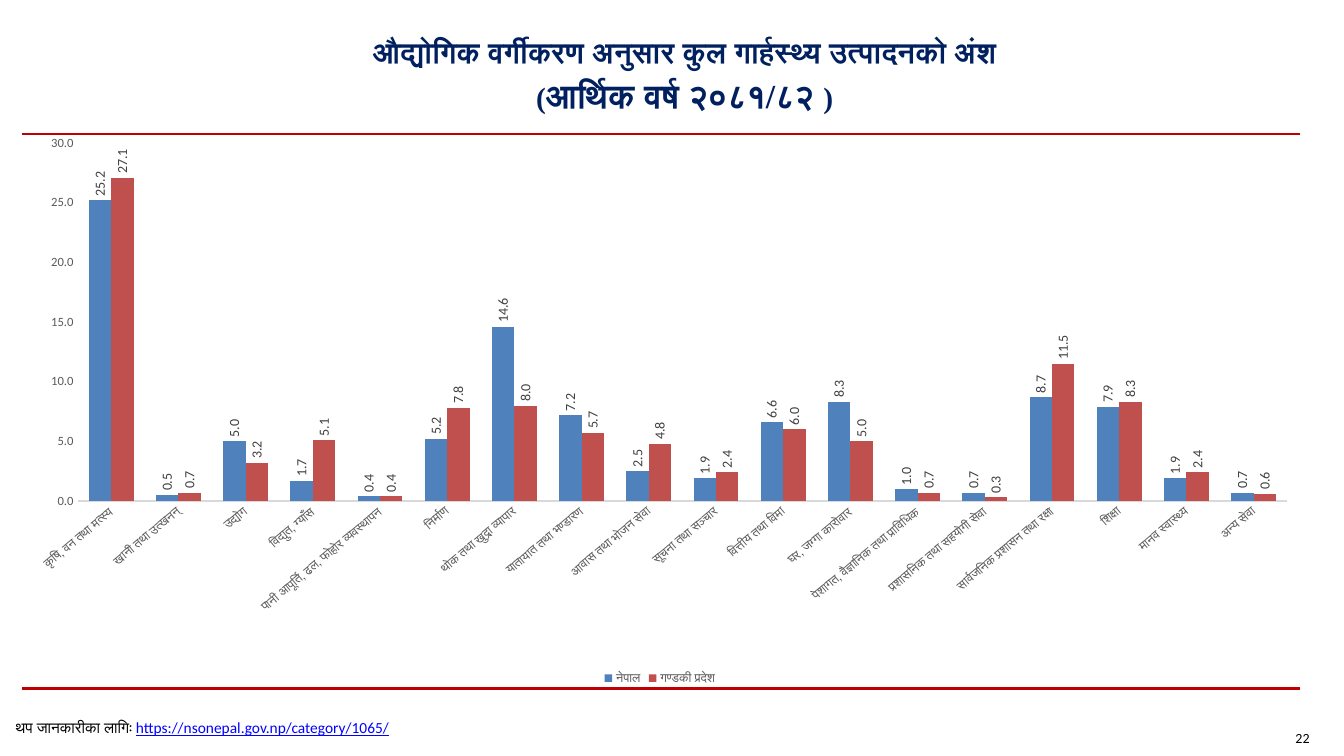
from lxml import etree
from pptx import Presentation
from pptx.chart.data import CategoryChartData
from pptx.dml.color import RGBColor
from pptx.enum.chart import XL_CHART_TYPE, XL_LABEL_POSITION, XL_LEGEND_POSITION, XL_TICK_MARK
from pptx.enum.shapes import MSO_CONNECTOR
from pptx.enum.text import MSO_ANCHOR, MSO_AUTO_SIZE, PP_ALIGN
from pptx.oxml import parse_xml
from pptx.oxml.ns import nsdecls, qn
from pptx.util import Pt

PX = 9144
COLUMN = XL_CHART_TYPE.COLUMN_CLUSTERED
OUTER = XL_LABEL_POSITION.OUTSIDE_END
BOTTOM = XL_LEGEND_POSITION.BOTTOM
NO_TICK = XL_TICK_MARK.NONE
STRAIGHT = MSO_CONNECTOR.STRAIGHT
MIDDLE = MSO_ANCHOR.MIDDLE
NO_FIT = MSO_AUTO_SIZE.NONE
CENTER = PP_ALIGN.CENTER

NAVY = RGBColor(0x00, 0x20, 0x60)
CRIMSON = RGBColor(0xC0, 0x00, 0x00)
BLACK = RGBColor(0x00, 0x00, 0x00)
LINK = RGBColor(0x00, 0x00, 0xFF)
GRAY = RGBColor(0x59, 0x59, 0x59)
DARK = RGBColor(0x40, 0x40, 0x40)
PALE = RGBColor(0xD9, 0xD9, 0xD9)
BLUE = RGBColor(0x4F, 0x81, 0xBD)
RED = RGBColor(0xC0, 0x50, 0x4D)

SHARES = [
    ("कृषि, वन तथा मत्स्य", 25.2, 27.1),
    ("खानी तथा उत्खनन्", 0.5, 0.7),
    ("उद्योग", 5.0, 3.2),
    ("विद्युत, ग्याँस", 1.7, 5.1),
    ("पानी आपूर्ति, ढल, फोहोर व्यवस्थापन", 0.4, 0.4),
    ("निर्माण", 5.2, 7.8),
    ("थोक तथा खुद्रा व्यापार", 14.6, 8.0),
    ("यातायात तथा भण्डारण", 7.2, 5.7),
    ("आवास तथा भोजन सेवा", 2.5, 4.8),
    ("सूचना तथा सञ्चार", 1.9, 2.4),
    ("वित्तीय तथा विमा", 6.6, 6.0),
    ("घर, जग्गा कारोवार", 8.3, 5.0),
    ("पेशागत, वैज्ञानिक तथा प्राविधिक", 1.0, 0.7),
    ("प्रशासनिक तथा सहयोगी सेवा", 0.7, 0.3),
    ("सार्वजनिक प्रशासन तथा रक्षा", 8.7, 11.5),
    ("शिक्षा", 7.9, 8.3),
    ("मानव स्वास्थ्य", 1.9, 2.4),
    ("अन्य सेवा", 0.7, 0.6),
]
REGIONS = [("नेपाल", BLUE), ("गण्डकी प्रदेश", RED)]


def scale(*lengths):
    """Turn px lengths into EMU."""
    return [length * PX for length in lengths]


def style(font, size, color, name="Calibri"):
    """Set the size, colour and face of a font."""
    font.size, font.name = Pt(size), name
    font.color.rgb = color


def add_run(para, text, size, color, name="Calibri"):
    """Append a styled run and return its font."""
    run = para.add_run()
    run.text = text
    style(run.font, size, color, name)
    return run.font


def add_title(slide, box):
    """Fill the title placeholder with two centred lines."""
    title = slide.shapes.title
    title.left, title.top, title.width, title.height = scale(*box)
    frame = title.text_frame
    frame.auto_size, frame.vertical_anchor = NO_FIT, MIDDLE
    para = frame.paragraphs[0]
    para.alignment, para.line_spacing = CENTER, 1.14
    head = "औद्योगिक वर्गीकरण अनुसार कुल गार्हस्थ्य उत्पादनको अंश"
    for text, size in [(head, 21), ("\v", 21), ("(", 21), ("आर्थिक वर्ष २०८१/८२ ", 24), (")", 21)]:
        if text == "\v":
            para.add_line_break()
        else:
            add_run(para, text, size, NAVY, "Times New Roman").bold = True


def add_rule(slide, left, top, width):
    """Draw a crimson rule across the slide."""
    rule = slide.shapes.add_connector(STRAIGHT, *scale(left, top, left + width, top))
    rule.line.color.rgb = CRIMSON
    rule.line.width = Pt(1.5)
    etree.SubElement(rule.element.spPr, qn("a:effectLst"))


def add_note(slide, box, parts):
    """Place one line of text from (text, size, colour) parts."""
    frame = slide.shapes.add_textbox(*scale(*box)).text_frame
    frame.word_wrap = True
    for text, size, color in parts:
        add_run(frame.paragraphs[0], text, size, color).underline = color == LINK


def turn(root, query, angle):
    """Rotate the chart text found by a query, in degrees."""
    for body in root.xpath(query):
        body.set("rot", str(angle * 60000))
        body.set("vert", "horz")


def set_plot(root, **place):
    """Fix the inner plot area as shares of the chart."""
    area = root.xpath(".//c:plotArea")[0]
    for old in area.findall(qn("c:layout")):
        area.remove(old)
    tags = '<c:layoutTarget val="inner"/><c:xMode val="edge"/><c:yMode val="edge"/>'
    tags += "".join(f'<c:{key} val="{value}"/>' for key, value in place.items())
    area.insert(0, parse_xml(
        f'<c:layout {nsdecls("c")}><c:manualLayout>{tags}</c:manualLayout></c:layout>'))


def add_bars(slide, box):
    """Place the clustered column chart of shares by industry."""
    names, *columns = zip(*SHARES)
    data = CategoryChartData(number_format="0.0")
    data.categories = names
    for (region, _), values in zip(REGIONS, columns):
        data.add_series(region, values)
    chart = slide.shapes.add_chart(COLUMN, *scale(*box), data).chart
    style(chart.font, 10, BLACK)
    chart.has_title = False
    chart.has_legend = True
    chart.legend.position = BOTTOM
    chart.legend.include_in_layout = False
    style(chart.legend.font, 9, GRAY)

    plot = chart.plots[0]
    plot.gap_width, plot.overlap = 100, 0
    plot.vary_by_categories = False
    for series, (_, color) in zip(plot.series, REGIONS):
        series.format.fill.solid()
        series.format.fill.fore_color.rgb = color
        labels = series.data_labels
        labels.show_value, labels.position = True, OUTER
        labels.number_format, labels.number_format_is_linked = "0.0", False
        style(labels.font, 10, DARK)

    for axis in (chart.category_axis, chart.value_axis):
        axis.major_tick_mark = axis.minor_tick_mark = NO_TICK
        axis.has_major_gridlines = False
        style(axis.tick_labels.font, 9, GRAY)
    line = chart.category_axis.format.line
    line.color.rgb, line.width = PALE, Pt(0.75)
    axis = chart.value_axis
    axis.format.line.fill.background()
    axis.minimum_scale, axis.maximum_scale, axis.major_unit = 0, 30, 5
    axis.tick_labels.number_format = "0.0"
    axis.tick_labels.number_format_is_linked = False

    root = chart._chartSpace
    turn(root, ".//c:dLbls/c:txPr/a:bodyPr", -90)
    turn(root, ".//c:catAx/c:txPr/a:bodyPr", -40)
    set_plot(root, x=0.047, y=0.016, w=0.941, h=0.646)


def main():
    """Build and save the slide."""
    deck = Presentation()
    deck.slide_width, deck.slide_height = scale(1333, 750)
    slide = deck.slides.add_slide(deck.slide_layouts[5])
    for top in (133, 683):
        add_rule(slide, 22, top, 1267)
    add_title(slide, (275, 33, 808, 77))
    add_note(slide, (1275, 719, 52, 26), [("22", 10, BLACK)])
    add_bars(slide, (17, 133, 1275, 550))
    add_note(slide, (6, 708, 617, 33), [
        ("थप जानकारीका लागिः ", 11, BLACK),
        ("https://nsonepal.gov.np/category/1065/", 11, LINK),
    ])
    deck.save("out.pptx")


if __name__ == "__main__":
    main()
